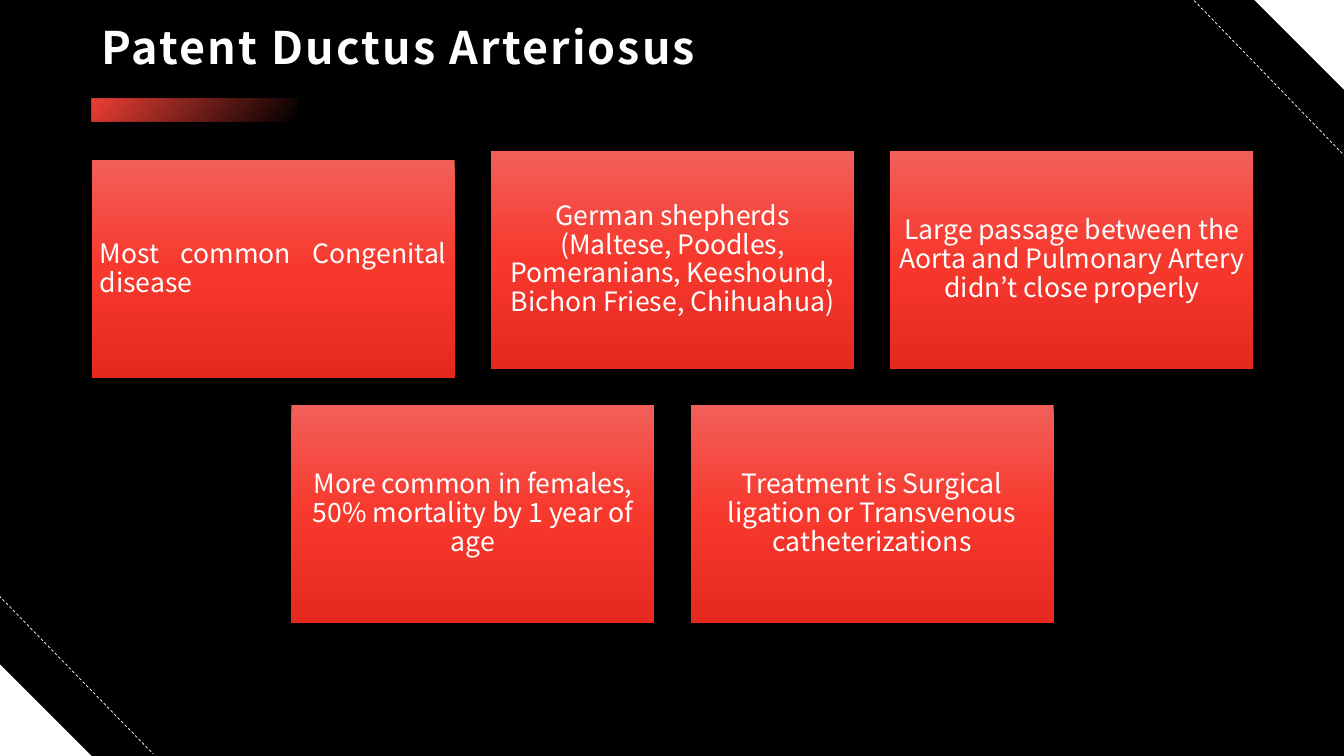
from lxml.etree import SubElement
from pptx import Presentation
from pptx.dml.color import RGBColor
from pptx.enum.dml import MSO_LINE
from pptx.enum.shapes import MSO_CONNECTOR, MSO_SHAPE
from pptx.enum.text import MSO_ANCHOR, PP_ALIGN
from pptx.oxml.ns import qn
from pptx.util import Inches, Pt

WHITE = "FFFFFF"
CARD_STOPS = [(0, "F25F59", 100), (50, "F7382D", 100), (100, "E5291F", 100)]
BAR_STOPS = [(0, "EE4036", 100), (99, "EE4036", 0)]
CARD_WIDTH, CARD_HEIGHT, CARD_GAP = 3.6, 2.16, 0.36
TOP_CARDS = [
    "Most common Congenital disease",
    "German shepherds (Maltese, Poodles, Pomeranians, Keeshound, Bichon Friese, Chihuahua)",
    "Large passage between the Aorta and Pulmonary Artery didn’t close properly",
]
BOTTOM_CARDS = [
    "More common in females, 50% mortality by 1 year of age",
    "Treatment is Surgical ligation or Transvenous catheterizations",
]


def color(value):
    return RGBColor.from_string(value)


def add_plain_shape(page, kind, left, top, width, height):
    shape = page.shapes.add_shape(
        kind, Inches(left), Inches(top), Inches(width), Inches(height))
    shape.shadow.inherit = False
    shape.line.fill.background()
    return shape


def fill_gradient(shape, stops, angle):
    shape.fill.gradient()
    shape.fill.gradient_angle = 360 - angle
    stop_list = shape._element.spPr.find(qn("a:gradFill")).find(qn("a:gsLst"))
    for stop in list(stop_list):
        stop_list.remove(stop)
    for position, value, opacity in stops:
        stop = SubElement(stop_list, qn("a:gs"), pos=str(position * 1000))
        tint = SubElement(stop, qn("a:srgbClr"), val=value)
        if opacity < 100:
            SubElement(tint, qn("a:alpha"), val=str(opacity * 1000))


def write_text(box, text, font, size, align):
    frame = box.text_frame
    frame.word_wrap = True
    frame.vertical_anchor = MSO_ANCHOR.MIDDLE
    frame.text = text
    para = frame.paragraphs[0]
    para.alignment = align
    para.line_spacing = 0.9
    span = para.runs[0]
    span.font.name = font
    span.font.size = Pt(size)
    span.font.color.rgb = color(WHITE)
    for script in ("a:ea", "a:cs"):
        SubElement(span._r.get_or_add_rPr(), qn(script), typeface=font)
    return span


def add_corner(page, left, top, size, rotation):
    corner = add_plain_shape(page, MSO_SHAPE.RIGHT_TRIANGLE, left, top, size, size)
    corner.rotation = rotation
    corner.fill.solid()
    corner.fill.fore_color.rgb = color(WHITE)


def add_dashed_line(page, *ends):
    line = page.shapes.add_connector(MSO_CONNECTOR.STRAIGHT, *map(Inches, ends))
    line.line.color.rgb = color(WHITE)
    line.line.width = Pt(0.5)
    line.line.dash_style = MSO_LINE.DASH
    SubElement(line._element.spPr, qn("a:effectLst"))


def add_corners(page):
    add_corner(page, 0, 6.59, 0.91, 0)
    add_corner(page, 12.43, -0.01, 0.91, 180)
    add_dashed_line(page, -0.01, 5.91, 1.52, 7.48)
    add_dashed_line(page, 11.81, -0.03, 13.34, 1.55)


def add_heading(page, left, top, width, height):
    box = page.shapes.add_textbox(
        Inches(left), Inches(top), Inches(width), Inches(height))
    span = write_text(
        box, "Patent Ductus Arteriosus", "Noto Sans CJK TC", 32, PP_ALIGN.LEFT)
    span.font.bold = True
    span._r.get_or_add_rPr().set("spc", "150")
    bar = add_plain_shape(
        page, MSO_SHAPE.RECTANGLE, left, top + height + 0.16, 2.04, 0.23)
    fill_gradient(bar, BAR_STOPS, 40)


def add_card(page, left, top, text, align):
    card = add_plain_shape(
        page, MSO_SHAPE.RECTANGLE, left, top, CARD_WIDTH, CARD_HEIGHT)
    fill_gradient(card, CARD_STOPS, 90)
    frame = card.text_frame
    frame.margin_left = frame.margin_right = Inches(0.08)
    frame.margin_top = frame.margin_bottom = Inches(0.08)
    write_text(card, text, "Noto Sans CJK JP", 19, align)


def add_cards(page, left, top):
    step = CARD_WIDTH + CARD_GAP
    for index, text in enumerate(TOP_CARDS):
        first = index == 0
        add_card(page, left + index * step, top + (0.09 if first else 0), text,
                 PP_ALIGN.JUSTIFY if first else PP_ALIGN.CENTER)
    for index, text in enumerate(BOTTOM_CARDS):
        add_card(page, left + (index + 0.5) * step, top + CARD_HEIGHT + CARD_GAP,
                 text, PP_ALIGN.CENTER)


def main():
    deck = Presentation()
    deck.slide_width, deck.slide_height = Inches(13.33), Inches(7.5)
    page = deck.slides.add_slide(deck.slide_layouts[6])
    page.background.fill.solid()
    page.background.fill.fore_color.rgb = color("000000")
    add_corners(page)
    add_heading(page, 0.91, 0.18, 11.51, 0.64)
    add_cards(page, 0.91, 1.5)
    deck.save("out.pptx")


if __name__ == "__main__":
    main()
